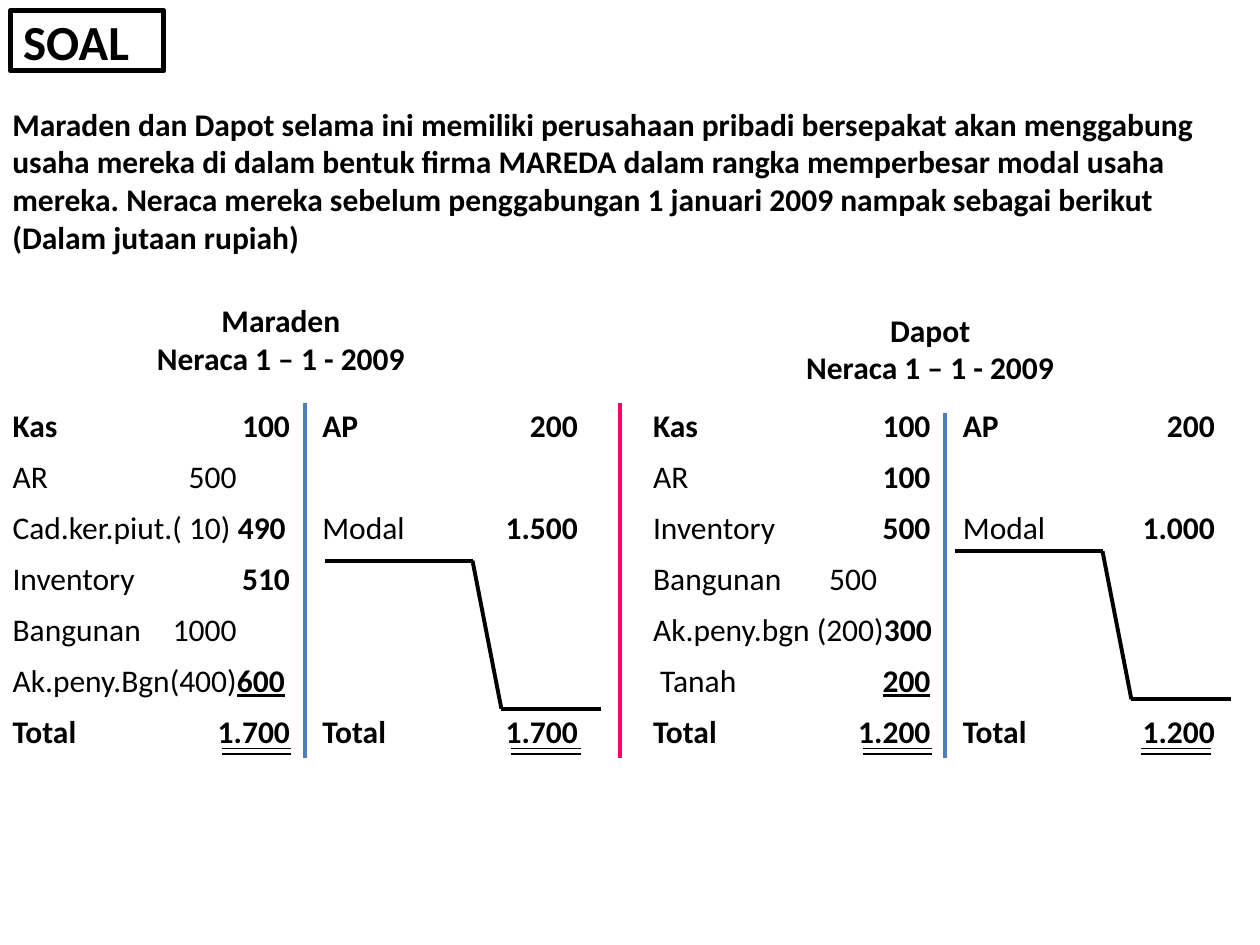
import pptx
import pptx.dml.color
import pptx.enum.shapes
import pptx.enum.text
import pptx.oxml.ns
import pptx.util
from dataclasses import dataclass
from lxml import etree

Pt = pptx.util.Pt
RGB = pptx.dml.color.RGBColor
ALIGN = pptx.enum.text.PP_ALIGN


@dataclass(frozen=True)
class Theme:
    font: str = "Calibri"
    ink: str = "000000"
    paper: str = "FFFFFF"
    account_divider: str = "4B7EBC"
    firm_divider: str = "FF0066"
    title_size: float = 28
    body_size: float = 18


theme = Theme()


def add_text(paragraph, text, style="b", size=theme.body_size):
    """Add one run; style may hold b for bold and u for underline."""
    run = paragraph.add_run()
    run.text = text
    run.font.name = theme.font
    run.font.size = Pt(size)
    run.font.bold = "b" in style
    run.font.underline = "u" in style
    run.font.color.rgb = RGB.from_string(theme.ink)


def add_line(start, end, width, color=theme.ink):
    points = [Pt(value) for value in (*start, *end)]
    line = slide.shapes.add_connector(pptx.enum.shapes.MSO_CONNECTOR.STRAIGHT, *points)
    line.line.width = Pt(width)
    line.line.color.rgb = RGB.from_string(color)
    etree.SubElement(line._element.spPr, pptx.oxml.ns.qn("a:effectLst"))


presentation = pptx.Presentation()
presentation.slide_width, presentation.slide_height = Pt(720), Pt(540)
slide = presentation.slides.add_slide(presentation.slide_layouts[5])

# Title
title = slide.shapes.title
title.left, title.top, title.width, title.height = Pt(6), Pt(6), Pt(87.6), Pt(34.5)
title.line.color.rgb = RGB.from_string(theme.ink)
title.line.width = Pt(3)
title.text_frame.vertical_anchor = pptx.enum.text.MSO_ANCHOR.MIDDLE
title.text_frame.paragraphs[0].alignment = ALIGN.LEFT
add_text(title.text_frame.paragraphs[0], "SOAL", size=theme.title_size)

# Problem statement and balance sheet headings
problem = (
    "Maraden dan Dapot selama ini memiliki perusahaan pribadi bersepakat akan "
    "menggabung usaha mereka di dalam bentuk firma MAREDA dalam rangka memperbesar "
    "modal usaha mereka. Neraca mereka sebelum penggabungan 1 januari 2009 nampak "
    "sebagai berikut (Dalam jutaan rupiah)"
)
date_line = "Neraca 1 – 1 - 2009"
for box, alignment, lines in [
    ((0, 56.2, 720, 94.3), ALIGN.LEFT, [problem]),
    ((11.5, 168.5, 298, 51), ALIGN.CENTER, ["Maraden", date_line]),
    ((382.5, 174, 298, 51), ALIGN.CENTER, ["Dapot", date_line]),
]:
    frame = slide.shapes.add_textbox(*map(Pt, box)).text_frame
    frame.word_wrap = True
    frame.auto_size = pptx.enum.text.MSO_AUTO_SIZE.SHAPE_TO_FIT_TEXT
    for index, line_text in enumerate(lines):
        paragraph = frame.add_paragraph() if index else frame.paragraphs[0]
        paragraph.alignment = alignment
        add_text(paragraph, line_text)

# Balance sheets: each cell is a list of (text, style) runs.
# One tab leads to the final amount column, TAB_INNER rows to the gross amount.
TAB_INNER, TAB_ASSETS = 128, 158.5
TABLE_TOP, COLUMN_WIDTH, ROW_HEIGHT = 229, 177, 29.2
maraden_rows = [
    ([("Kas\t100", "b")], [("AP\t200", "b")]),
    ([("AR\t500", "")], []),
    ([("Cad.ker.piut.( 10) ", ""), ("490", "b")], [("Modal\t", ""), ("1.500", "b")]),
    ([("Inventory\t", ""), ("510", "b")], []),
    ([("Bangunan\t1000", "")], []),
    ([("Ak.peny.Bgn(400)", ""), ("600", "bu")], []),
    ([("Total\t1.700", "b")], [("Total\t1.700", "b")]),
]
dapot_rows = [
    ([("Kas\t100", "b")], [("AP\t200", "b")]),
    ([("AR\t", ""), ("100", "b")], []),
    ([("Inventory\t", ""), ("500", "b")], [("Modal\t", ""), ("1.000", "b")]),
    ([("Bangunan\t500", "")], []),
    ([("Ak.peny.bgn (200)", ""), ("300", "b")], []),
    ([(" Tanah\t", ""), ("200", "bu")], []),
    ([("Total\t1.200", "b")], [("Total\t1.200", "b")]),
]
for left, rows, inner_rows, tab_liabilities in [
    (0, maraden_rows, (1, 4), 146),
    (366, dapot_rows, (3,), 144),
]:
    table = slide.shapes.add_table(
        len(rows), 2, Pt(left), Pt(TABLE_TOP), Pt(2 * COLUMN_WIDTH), Pt(ROW_HEIGHT * len(rows))
    ).table
    table.first_row = table.horz_banding = False
    for column in table.columns:
        column.width = Pt(COLUMN_WIDTH)
    for row_index, row in enumerate(rows):
        table.rows[row_index].height = Pt(ROW_HEIGHT)
        for column_index, runs in enumerate(row):
            cell = table.cell(row_index, column_index)
            properties = cell._tc.get_or_add_tcPr()
            for side in ("lnL", "lnR", "lnT", "lnB"):
                thick = (row_index, side) in ((0, "lnB"), (1, "lnT"))
                border = etree.SubElement(
                    properties, pptx.oxml.ns.qn("a:" + side), w=str(Pt(3 if thick else 1))
                )
                fill = etree.SubElement(border, pptx.oxml.ns.qn("a:solidFill"))
                etree.SubElement(fill, pptx.oxml.ns.qn("a:srgbClr"), val=theme.paper)
            cell.fill.background()
            paragraph = cell.text_frame.paragraphs[0]
            paragraph.font.size = Pt(theme.body_size)
            if column_index:
                tab = tab_liabilities
            else:
                tab = TAB_INNER if row_index in inner_rows else TAB_ASSETS
            tabs = etree.SubElement(
                paragraph._p.get_or_add_pPr(), pptx.oxml.ns.qn("a:tabLst")
            )
            # Tab stops precede the default run properties in the schema.
            tabs.getparent().insert(0, tabs)
            etree.SubElement(tabs, pptx.oxml.ns.qn("a:tab"), pos=str(Pt(tab)), algn="r")
            for text, style in runs:
                add_text(paragraph, text, style)

# Strokes closing the unused liability rows
closing_stroke = [(186, 320.4), (270, 320.4), (286.5, 405), (343.5, 405)]
for shift_x, shift_y in [(0, 0), (360, -5.4)]:
    corners = [(x + shift_x, y + shift_y) for x, y in closing_stroke]
    for start, end in zip(corners, corners[1:]):
        add_line(start, end, 2.25)

# Double rules under the totals
for left in (126.7, 292.3, 493.2, 652.3):
    for y in (427.7, 430.8):
        add_line((left, y), (left + 39.6, y), 0.75)

# Vertical dividers
for x, top, color in [
    (174.2, 230.4, theme.account_divider),
    (540, 236.2, theme.account_divider),
    (354.2, 230.4, theme.firm_divider),
]:
    add_line((x, top), (x, 433.4), 2.25, color)

presentation.save("out.pptx")
